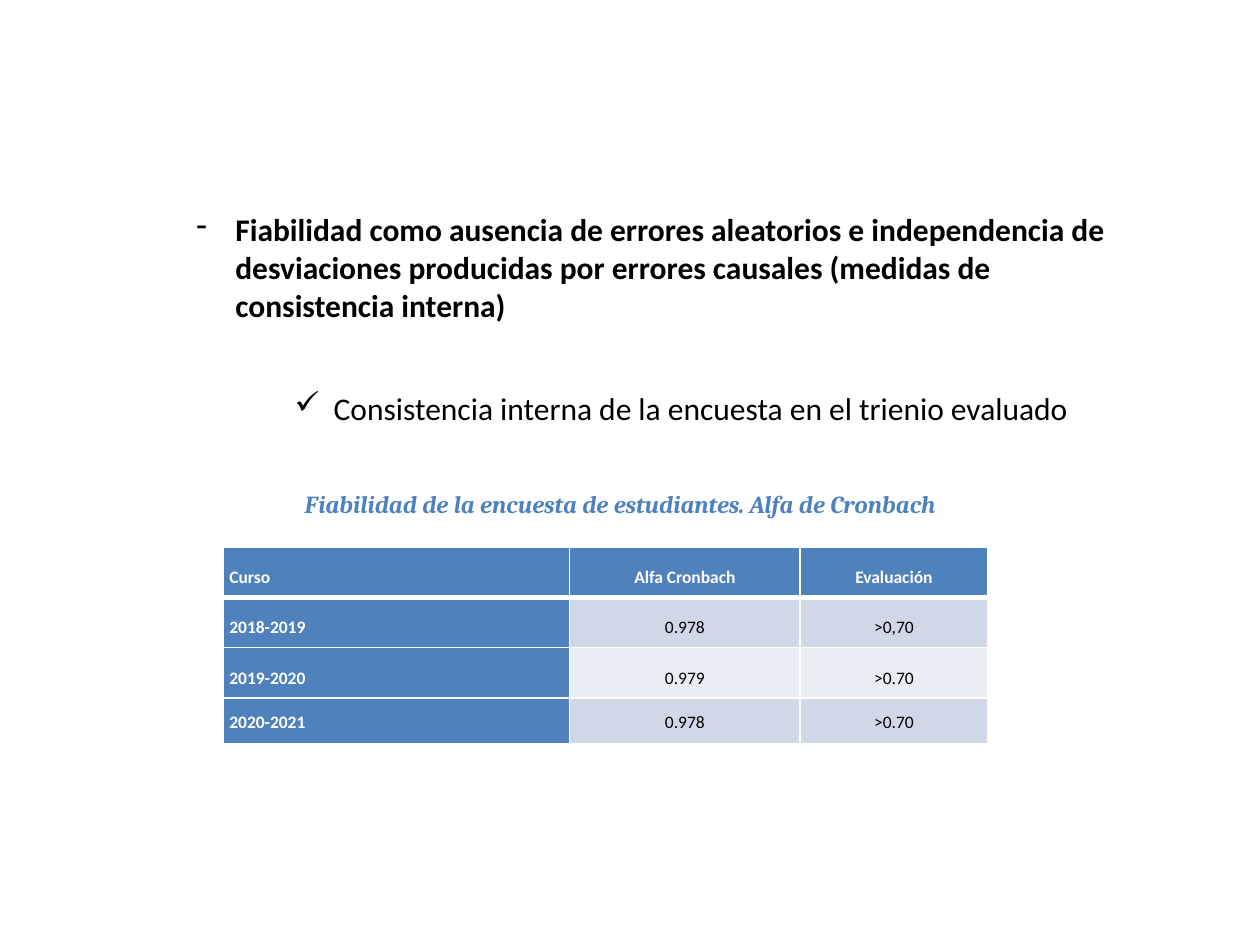
from lxml.etree import SubElement
from pptx import Presentation
from pptx.dml.color import RGBColor
from pptx.enum.text import MSO_ANCHOR, PP_ALIGN
from pptx.oxml.ns import qn
from pptx.util import Inches, Pt

COLORS = {
    "white": "FFFFFF",
    "black": "000000",
    "blue": "4F81BD",
    "band_dark": "D0D8E8",
    "band_light": "E9EDF4",
}

ROWS = [
    ("Curso", "Alfa Cronbach", "Evaluación"),
    ("2018-2019", "0.978", ">0,70"),
    ("2019-2020", "0.979", ">0.70"),
    ("2020-2021", "0.978", ">0.70"),
]
COLUMN_WIDTHS = (2.75, 1.83, 1.49)
ROW_HEIGHTS = (0.4, 0.4, 0.4, 0.36)


def write_text(frame, text, size=18, font="Calibri", color="black", bold=False,
               italic=False, align=PP_ALIGN.LEFT, bullet=None):
    para = frame.paragraphs[0]
    para.alignment = align
    if bullet:
        properties = para._p.get_or_add_pPr()
        properties.set("marL", str(Inches(0.31)))
        properties.set("indent", str(-Inches(0.31)))
        SubElement(properties, qn("a:buChar"), char=bullet)
    span = para.add_run()
    span.text = text
    span.font.size = Pt(size)
    span.font.name = font
    span.font.bold = bold
    span.font.italic = italic
    span.font.color.rgb = RGBColor.from_string(COLORS[color])
    return para


def add_text(page, area, text, **text_format):
    box = page.shapes.add_textbox(*map(Inches, area))
    box.text_frame.word_wrap = True
    write_text(box.text_frame, text, **text_format)


def set_borders(cell, bottom):
    properties = cell._tc.get_or_add_tcPr()
    for side, width in (("L", 1), ("R", 1), ("T", 1), ("B", bottom)):
        line = SubElement(properties, qn(f"a:ln{side}"), w=str(Pt(width)))
        fill = SubElement(line, qn("a:solidFill"))
        SubElement(fill, qn("a:srgbClr"), val=COLORS["white"])


def fill_cell(cell, text, row, column):
    heading = row == 0 or column == 0
    band = "band_dark" if row % 2 else "band_light"
    set_borders(cell, bottom=3 if row == 0 else 1)
    cell.fill.solid()
    cell.fill.fore_color.rgb = RGBColor.from_string(COLORS["blue" if heading else band])
    cell.margin_left = cell.margin_right = Inches(0.05)
    cell.margin_top = cell.margin_bottom = 0
    cell.vertical_anchor = MSO_ANCHOR.MIDDLE
    para = write_text(cell.text_frame, text, size=10, bold=heading,
                      color="white" if heading else "black",
                      align=PP_ALIGN.CENTER if column else PP_ALIGN.LEFT)
    para.line_spacing = 1.15 if row == len(ROWS) - 1 else 1.5
    para.space_after = Pt(10)


def add_reliability_table(page, area):
    table = page.shapes.add_table(len(ROWS), len(COLUMN_WIDTHS), *map(Inches, area)).table
    table.horz_banding = False
    for column, width in zip(table.columns, COLUMN_WIDTHS):
        column.width = Inches(width)
    for row, height in zip(table.rows, ROW_HEIGHTS):
        row.height = Inches(height)
    for row, texts in enumerate(ROWS):
        for column, text in enumerate(texts):
            fill_cell(table.cell(row, column), text, row, column)


def main():
    deck = Presentation()
    deck.slide_width, deck.slide_height = Inches(10), Inches(7.5)
    page = deck.slides.add_slide(deck.slide_layouts[6])
    add_text(page, (1.46, 1.62, 7.72, 1.01),
             "Fiabilidad como ausencia de errores aleatorios e independencia de "
             "desviaciones producidas por errores causales (medidas de consistencia interna)",
             bold=True, bullet="-")
    add_text(page, (2.24, 3.04, 6.42, 0.4),
             "Consistencia interna de la encuesta en el trienio evaluado", bullet="✓")
    add_reliability_table(page, (1.77, 4.34, 6.07, 1.56))
    add_text(page, (2.32, 3.83, 5.3, 0.34),
             "Fiabilidad de la encuesta de estudiantes. Alfa de Cronbach",
             size=14, font="Cambria", color="blue", bold=True, italic=True)
    deck.save("out.pptx")


if __name__ == "__main__":
    main()
